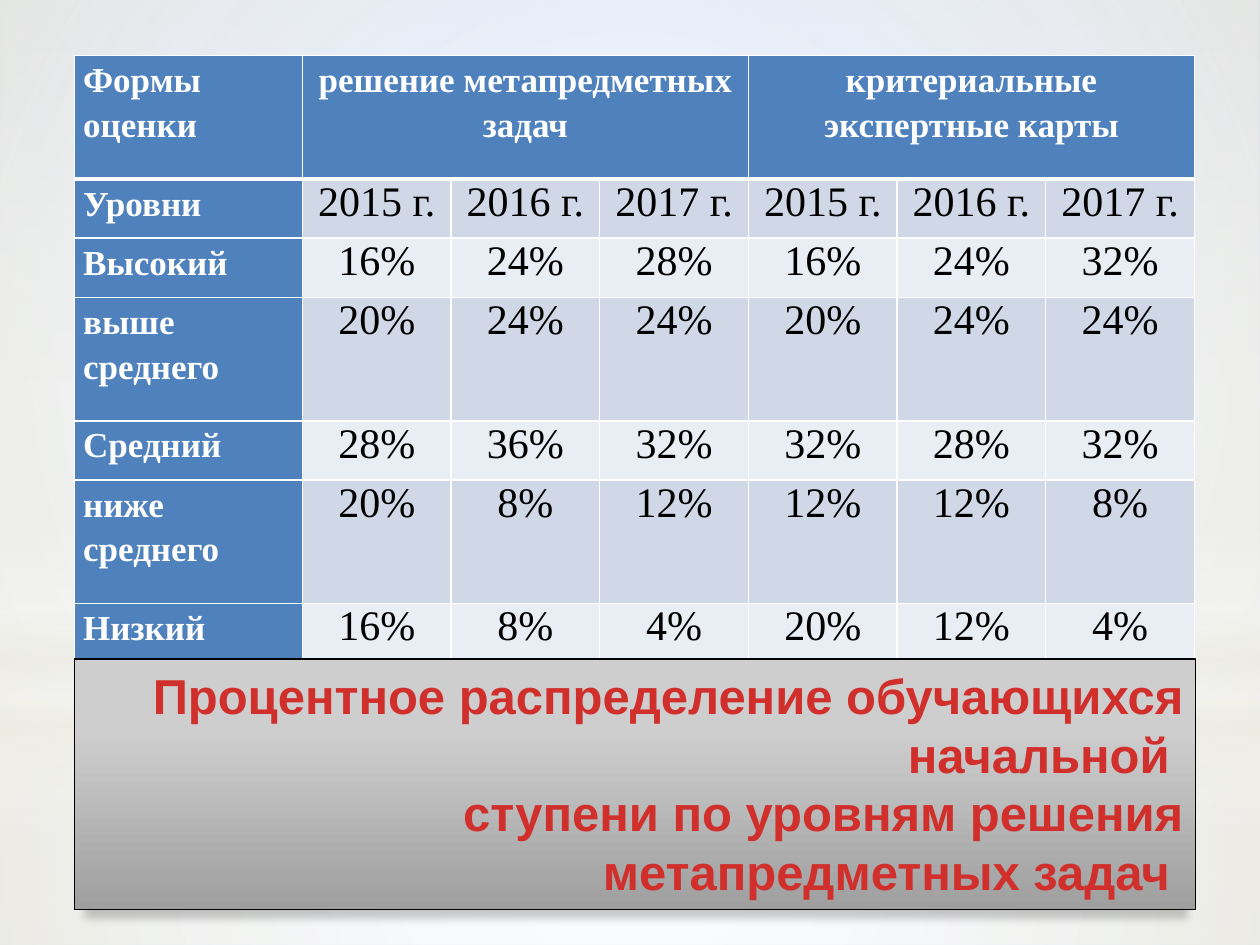
"""Build a slide with a table of pupil levels and its caption."""
import pptx
import pptx.util
import pptx.dml.color
import pptx.enum.shapes
import pptx.enum.text
import pptx.oxml
import pptx.oxml.ns

Inches, Pt = pptx.util.Inches, pptx.util.Pt
RGBColor = pptx.dml.color.RGBColor
Align = pptx.enum.text.PP_ALIGN
Shape = pptx.enum.shapes.MSO_SHAPE
qn = pptx.oxml.ns.qn
NAMESPACE = pptx.oxml.ns.nsdecls("a")

CORNER = "Формы оценки"
GROUPS = ["решение метапредметных задач", "критериальные экспертные карты"]
YEARS = ["2015 г.", "2016 г.", "2017 г."]
LEVELS = [
    ("Высокий", [16, 24, 28, 16, 24, 32]),
    ("выше среднего", [20, 24, 24, 20, 24, 24]),
    ("Средний", [28, 36, 32, 32, 28, 32]),
    ("ниже среднего", [20, 8, 12, 12, 12, 8]),
    ("Низкий", [16, 8, 4, 20, 12, 4]),
]
CAPTION = [
    "Процентное распределение обучающихся начальной ",
    "ступени по уровням решения метапредметных задач ",
]

THEME = {
    "table_font": "Times New Roman", "caption_font": "Arial",
    "label_size": 20, "value_size": 24, "caption_size": 28,
    "white": "FFFFFF", "black": "000000", "header": "4F81BD",
    "bands": ["D0D8E8", "E9EDF4"],
    "background": [(0, "C2D1ED", 100), (43, "E1E8F5", 100)],
    "caption_fill": [(28, "CECECE", 100), (100, "9F9F9F", 100)],
    "caption_text": [(0, "FC7C7A", 100), (75, "D02F2C", 100), (100, "C70500", 100)],
}
GLOWS = [
    (Shape.RECTANGLE, (0, 5.58, 10, 1.92), True,
     [(0, "FFFFFF", 91), (37, "FFFFFF", 76), (100, "EEECE1", 79)]),
    (Shape.RECTANGLE, (0, 0, 10, 5.58), True,
     [(0, "FFFFFF", 89), (48, "FFFFFF", 62), (100, "EEECE1", 79)]),
    (Shape.RECTANGLE, (0, 4.12, 10, 2.5), False,
     [(0, "FFFFFF", 0), (29, "FFFFFF", 30), (45, "EEECE1", 40),
      (55, "FFFFFF", 26), (65, "EEECE1", 60), (100, "FFFFFF", 0)]),
    (Shape.OVAL, (0, 1.75, 10, 5.58), True,
     [(0, "FFFFFF", 100), (56, "FFFFFF", 0)]),
]
LEFT, WIDTH = 0.59, 8.9
TABLE_TOP, CAPTION_TOP, CAPTION_HEIGHT = 0.44, 5.23, 1.99
LABEL_WIDTH, VALUE_WIDTH = 1.81, 1.18
SHORT_ROW, TALL_ROW = 0.47, 0.98


def set_gradient(fill, owner, stops, radial=False):
    fill.gradient()
    stop_xml = "".join(
        f'<a:gs pos="{position * 1000}"><a:srgbClr val="{color}">'
        f'<a:alpha val="{alpha * 1000}"/></a:srgbClr></a:gs>'
        for position, color, alpha in stops)
    direction = (
        '<a:path path="circle"><a:fillToRect l="50000" t="50000" r="50000" b="50000"/></a:path>'
        if radial else '<a:lin ang="5400000" scaled="0"/>')
    old = owner.find(".//" + qn("a:gradFill"))
    old.getparent().replace(old, pptx.oxml.parse_xml(
        f'<a:gradFill {NAMESPACE} rotWithShape="1"><a:gsLst>{stop_xml}</a:gsLst>'
        f'{direction}</a:gradFill>'))


def add_gradient_shape(slide, kind, box, stops, radial=False):
    shape = slide.shapes.add_shape(kind, *map(Inches, box))
    shape.shadow.inherit = False
    shape.line.fill.background()
    set_gradient(shape.fill, shape._element, stops, radial)
    return shape


def style_cell(cell, text, fill, label=False, alignment=Align.CENTER, bottom=1):
    cell.text_frame.text = text
    cell.margin_left = cell.margin_right = Inches(0.07)
    cell.margin_top = cell.margin_bottom = 0
    cell.fill.solid()
    cell.fill.fore_color.rgb = RGBColor.from_string(fill)
    paragraph = cell.text_frame.paragraphs[0]
    paragraph.alignment = alignment
    if label:
        paragraph.line_spacing = 1.15
    for run in paragraph.runs:
        run.font.name = THEME["table_font"]
        run.font.size = Pt(THEME["label_size" if label else "value_size"])
        run.font.bold = label
        run.font.color.rgb = RGBColor.from_string(THEME["white" if label else "black"])
    properties = cell._tc.get_or_add_tcPr()
    for index, side in enumerate("LRTB"):
        width = Pt(bottom if side == "B" else 1)
        properties.insert(index, pptx.oxml.parse_xml(
            f'<a:ln{side} {NAMESPACE} w="{width}"><a:solidFill>'
            f'<a:srgbClr val="{THEME["white"]}"/></a:solidFill></a:ln{side}>'))


def add_level_table(slide):
    rows = [("Уровни", YEARS * len(GROUPS))]
    rows += [(name, [f"{value}%" for value in values]) for name, values in LEVELS]
    heights = [TALL_ROW] + [TALL_ROW if " " in name else SHORT_ROW for name, _ in rows]
    column_count = 1 + len(YEARS) * len(GROUPS)
    table = slide.shapes.add_table(
        len(heights), column_count, Inches(LEFT), Inches(TABLE_TOP),
        Inches(WIDTH), Inches(sum(heights))).table
    for index, column in enumerate(table.columns):
        column.width = Inches(VALUE_WIDTH if index else LABEL_WIDTH)
    for row, height in zip(table.rows, heights):
        row.height = Inches(height)

    headings = [CORNER]
    for group in GROUPS:
        headings += [group] + [""] * (len(YEARS) - 1)
    for column, heading in enumerate(headings):
        style_cell(table.cell(0, column), heading, THEME["header"], True,
                   Align.CENTER if column else Align.LEFT, bottom=3)
    for first in range(1, column_count, len(YEARS)):
        table.cell(0, first).merge(table.cell(0, first + len(YEARS) - 1))

    for row, (name, values) in enumerate(rows, 1):
        style_cell(table.cell(row, 0), name, THEME["header"], True,
                   Align.LEFT if row == 1 else Align.JUSTIFY)
        for column, value in enumerate(values, 1):
            style_cell(table.cell(row, column), value, THEME["bands"][(row - 1) % 2])


def add_caption(slide):
    shape = add_gradient_shape(
        slide, Shape.RECTANGLE, (LEFT, CAPTION_TOP, WIDTH, CAPTION_HEIGHT),
        THEME["caption_fill"])
    shape.line.color.rgb = RGBColor.from_string(THEME["black"])
    shape.line.width = Pt(0.75)
    shape._element.spPr.find(qn("a:effectLst")).append(pptx.oxml.parse_xml(
        f'<a:outerShdw {NAMESPACE} blurRad="{Pt(5)}" dist="{Pt(4)}" dir="5400000" '
        f'sx="98000" algn="b" rotWithShape="0"><a:srgbClr val="{THEME["black"]}">'
        '<a:alpha val="20000"/></a:srgbClr></a:outerShdw>'))
    frame = shape.text_frame
    frame.word_wrap = True
    frame.vertical_anchor = pptx.enum.text.MSO_ANCHOR.TOP
    frame.auto_size = pptx.enum.text.MSO_AUTO_SIZE.SHAPE_TO_FIT_TEXT
    frame.text = "\n".join(CAPTION)
    for paragraph in frame.paragraphs:
        paragraph.alignment = Align.RIGHT
        for run in paragraph.runs:
            run.font.name = THEME["caption_font"]
            run.font.size = Pt(THEME["caption_size"])
            run.font.bold = True
            set_gradient(run.font.fill, run._r, THEME["caption_text"])


def main():
    presentation = pptx.Presentation()
    presentation.slide_width, presentation.slide_height = Inches(10), Inches(7.5)
    slide = presentation.slides.add_slide(presentation.slide_layouts[6])
    set_gradient(slide.background.fill, slide._element, THEME["background"])
    for kind, box, radial, stops in GLOWS:
        add_gradient_shape(slide, kind, box, stops, radial)
    add_level_table(slide)
    add_caption(slide)
    presentation.save("out.pptx")


if __name__ == "__main__":
    main()
